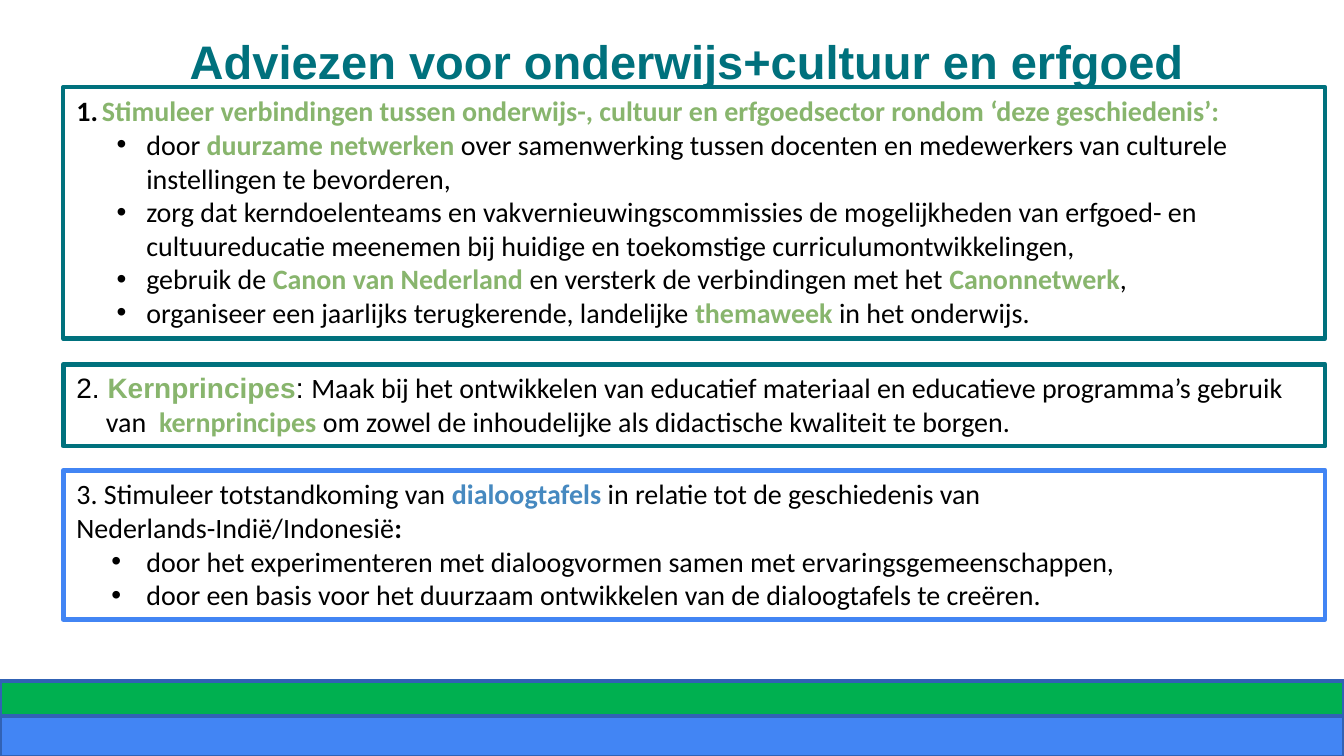
import pptx
import pptx.util
import pptx.dml.color
import pptx.enum.lang
import pptx.enum.shapes
import pptx.enum.text
from dataclasses import dataclass
from lxml import etree
from pptx.util import Inches


@dataclass(frozen=True)
class Theme:
    teal: str = "00717D"
    green: str = "88B56D"
    steel: str = "4689C0"
    blue: str = "4285F4"
    navy: str = "3162B5"
    grass: str = "00B050"
    black: str = "000000"
    heading: str = "Arial"
    body: str = "Calibri"
    title_size: float = 25.2
    body_size: float = 15


def rgb(value):
    return pptx.dml.color.RGBColor.from_string(value)


class SlideBuilder:
    def __init__(self, s, theme):
        self.s = s
        self.theme = theme
        plain = {"name": theme.body, "size": theme.body_size, "bold": False, "color": theme.black}
        self.styles = {
            "plain": plain,
            "green": {**plain, "bold": True, "color": theme.green},
            "steel": {**plain, "bold": True, "color": theme.steel},
            "bold": {**plain, "bold": True},
            "arial": {**plain, "name": theme.heading},
            "arial green": {**plain, "name": theme.heading, "bold": True, "color": theme.green},
            "title": {"name": theme.heading, "size": theme.title_size, "bold": True,
                      "color": theme.teal},
        }

    def run(self, p, text, style="plain"):
        r = p.add_run()
        r.text = text
        fmt = dict(self.styles[style])
        r.font.color.rgb = rgb(fmt.pop("color"))
        fmt["size"] = pptx.util.Pt(fmt["size"])
        fmt["language_id"] = pptx.enum.lang.MSO_LANGUAGE_ID.DUTCH
        for name, value in fmt.items():
            setattr(r.font, name, value)

    def bullet(self, pPr, mark):
        """Add a black bullet character, or automatic numbering for "1."."""
        def child(parent, tag, **attrs):
            return etree.SubElement(parent, pptx.oxml.ns.qn("a:" + tag), attrs)

        child(child(pPr, "buClr"), "srgbClr", val=self.theme.black)
        if mark == "1.":
            child(pPr, "buFont", typeface="+mj-lt")
            child(pPr, "buAutoNum", type="arabicPeriod")
        else:
            child(pPr, "buFont", typeface=self.theme.heading)
            child(pPr, "buChar", char=mark)

    def paragraphs(self, tf, items):
        for i, (layout, runs) in enumerate(items):
            p = tf.paragraphs[0] if i == 0 else tf.add_paragraph()
            p.alignment = pptx.enum.text.PP_ALIGN.LEFT
            p.level = layout.get("level", 0)
            pPr = p._p.get_or_add_pPr()
            pPr.set("marL", str(Inches(layout.get("left", 0))))
            pPr.set("indent", str(-Inches(layout.get("hang", 0))))
            if "mark" in layout:
                self.bullet(pPr, layout["mark"])
            for part in runs:
                self.run(p, *part)

    def title(self, text, left, top, width, height):
        sp = self.s.shapes.add_textbox(*map(Inches, (left, top, width, height)))
        tf = sp.text_frame
        tf.word_wrap = True
        for side in ("left", "top", "right", "bottom"):
            setattr(tf, "margin_" + side, Inches(0.1))
        p = tf.paragraphs[0]
        p.alignment = pptx.enum.text.PP_ALIGN.CENTER
        self.run(p, text, "title")

    def rectangle(self, left, top, width, height, line, weight=2, fill=None):
        sp = self.s.shapes.add_shape(pptx.enum.shapes.MSO_SHAPE.RECTANGLE,
                                     *map(Inches, (left, top, width, height)))
        sp.shadow.inherit = False
        if fill:
            sp.fill.solid()
            sp.fill.fore_color.rgb = rgb(fill)
        else:
            sp.fill.background()
        sp.line.color.rgb = rgb(line)
        sp.line.width = pptx.util.Pt(weight)
        return sp

    def advice(self, top, height, line, weight, items):
        sp = self.rectangle(0.47, top, 9.39, height, line, weight)
        tf = sp.text_frame
        tf.word_wrap = True
        tf.vertical_anchor = pptx.enum.text.MSO_ANCHOR.TOP
        tf.auto_size = pptx.enum.text.MSO_AUTO_SIZE.SHAPE_TO_FIT_TEXT
        self.paragraphs(tf, items)


def main():
    prs = pptx.Presentation()
    # Widescreen, 16:9
    prs.slide_width = Inches(10)
    prs.slide_height = prs.slide_width * 9 // 16
    theme = Theme()
    slide = SlideBuilder(prs.slides.add_slide(prs.slide_layouts[6]), theme)

    # Title
    slide.title("Adviezen voor onderwijs+cultuur en erfgoed ", 0.32, 0.14, 9.68, 0.56)

    # Paragraph layouts
    numbered = {"left": 0.19, "hang": 0.19, "mark": "1."}
    sub = {"level": 1, "left": 0.52, "hang": 0.22, "mark": "•"}
    hanging = {"left": 0.22, "hang": 0.22}
    wide = {"left": 0.52, "hang": 0.26, "mark": "•"}

    # Advice 1: connections between sectors
    slide.advice(0.65, 1.87, theme.teal, 2.25, [
        (numbered, [("Stimuleer verbindingen tussen onderwijs-, cultuur en erfgoedsector "
                     "rondom ‘deze geschiedenis’:", "green")]),
        (sub, [("door ",), ("duurzame netwerken ", "green"),
               ("over samenwerking tussen docenten en medewerkers van culturele "
                "instellingen te bevorderen,",)]),
        (sub, [("zorg dat kerndoelenteams en vakvernieuwingscommissies de mogelijkheden van "
                "erfgoed- en cultuureducatie meenemen bij huidige en toekomstige "
                "curriculumontwikkelingen,",)]),
        (sub, [("gebruik de ",), ("Canon van Nederland ", "green"),
               ("en versterk de verbindingen met het ",), ("Canonnetwerk", "green"), (",",)]),
        (sub, [("organiseer een jaarlijks terugkerende, landelijke ",),
               ("themaweek", "green"), (" in het onderwijs.",)]),
    ])

    # Footer bands
    slide.rectangle(0, 5.33, 10, 0.3, theme.navy, fill=theme.blue)
    slide.rectangle(0, 5.07, 10, 0.26, theme.navy, fill=theme.grass)

    # Advice 2: core principles
    slide.advice(2.71, 0.61, theme.teal, 2.5, [
        (hanging, [("2. ", "arial"), ("Kernprincipes", "arial green"), (": ", "arial"),
                   ("Maak bij het ontwikkelen van educatief materiaal en educatieve "
                    "programma’s gebruik van  ",),
                   ("kernprincipes", "green"),
                   (" om zowel de inhoudelijke als didactische kwaliteit te borgen.",)]),
    ])

    # Advice 3: dialogue tables
    slide.advice(3.5, 1.11, theme.blue, 2.5, [
        ({}, [("3. Stimuleer totstandkoming van ",), ("dialoogtafels ", "steel"),
              ("in relatie tot de geschiedenis van Nederlands-Indië/Indonesië",),
              (":", "bold")]),
        (wide, [("door het experimenteren met dialoogvormen samen met "
                 "ervaringsgemeenschappen,",)]),
        (wide, [("door een basis voor het duurzaam ontwikkelen van de dialoogtafels "
                 "te creëren.",)]),
    ])

    prs.save("out.pptx")


if __name__ == "__main__":
    main()
